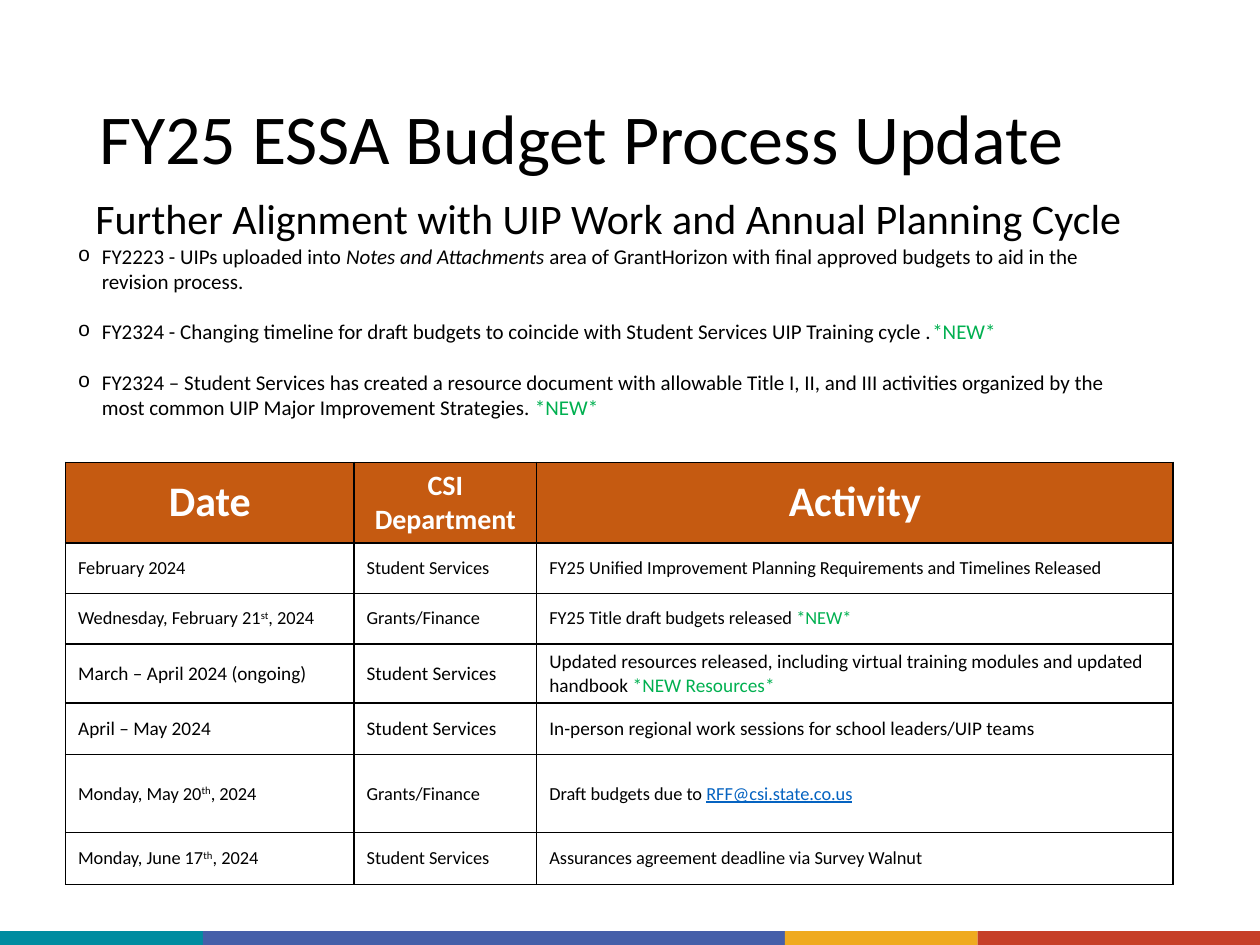
from lxml.etree import SubElement
from pptx import Presentation
from pptx.dml.color import RGBColor
from pptx.enum.shapes import MSO_SHAPE
from pptx.enum.text import MSO_ANCHOR, PP_ALIGN
from pptx.oxml.ns import qn
from pptx.util import Inches, Pt

BLACK = RGBColor(0x00, 0x00, 0x00)
WHITE = RGBColor(0xFF, 0xFF, 0xFF)
GREEN = RGBColor(0x00, 0xB0, 0x50)
BLUE = RGBColor(0x05, 0x63, 0xC1)
RUST = RGBColor(0xC5, 0x5A, 0x11)
TEAL = RGBColor(0x00, 0x8C, 0xA0)
INDIGO = RGBColor(0x45, 0x5F, 0xA9)
GOLD = RGBColor(0xEF, 0xAA, 0x1F)
RED = RGBColor(0xC6, 0x3F, 0x28)

NEW = ("*NEW*", "new")

GOALS = [
    ["FY2223 - UIPs uploaded into ", ("Notes and Attachments ", "italic"),
     "area of GrantHorizon with final approved budgets to aid in the revision process."],
    ["FY2324 - Changing timeline for draft budgets to coincide with Student Services "
     "UIP Training cycle .", NEW],
    ["FY2324 – Student Services has created a resource document with allowable Title I, II, "
     "and III activities organized by the most common UIP Major Improvement Strategies. ", NEW],
]

HEADINGS = [("Date", 24), ("CSI Department", 16), ("Activity", 24)]
COLUMN_WIDTHS = [2.29, 1.45, 5.05]
HEADING_HEIGHT = 0.64
TIMELINE = [
    (0.4, 10.5, ["February 2024"], ["Student Services"],
     ["FY25 Unified Improvement Planning Requirements and Timelines Released"]),
    (0.4, 10.5, ["Wednesday, February 21", ("st", "super"), ", 2024"], ["Grants/Finance"],
     ["FY25 Title draft budgets released ", NEW]),
    (0.47, 11, ["March – April 2024 (ongoing)"], ["Student Services"],
     ["Updated resources released, including virtual training modules and updated handbook ",
      ("*NEW Resources*", "new")]),
    (0.41, 11, ["April – May 2024"], ["Student Services"],
     ["In-person regional work sessions for school leaders/UIP teams"]),
    (0.62, 10.5, ["Monday, May 20", ("th", "super"), ", 2024"], ["Grants/Finance"],
     ["Draft budgets due to ", ("RFF@csi.state.co.us", "address")]),
    (0.41, 10.5, ["Monday, June 17", ("th", "super"), ", 2024"], ["Student Services"],
     ["Assurances agreement deadline via Survey Walnut"]),
]

FOOTER_BANDS = [(1.61, TEAL), (4.62, INDIGO), (1.53, GOLD), (2.24, RED)]


class SlideBuilder:
    """Holds the text style and the slide that is being filled."""

    def __init__(self, slide, font_name="Calibri"):
        self.slide = slide
        self.font_name = font_name

    def band(self, left, top, width, height, color):
        band = self.slide.shapes.add_shape(
            MSO_SHAPE.RECTANGLE, Inches(left), Inches(top), Inches(width), Inches(height))
        band.shadow.inherit = False
        band.fill.solid()
        band.fill.fore_color.rgb = color
        band.line.fill.background()

    def text_frame(self, left, top, width, height, anchor=MSO_ANCHOR.TOP):
        frame = self.slide.shapes.add_textbox(
            Inches(left), Inches(top), Inches(width), Inches(height)).text_frame
        frame.word_wrap = True
        frame.vertical_anchor = anchor
        return frame

    def wording(self, paragraph, parts, size, color=BLACK, bold=False, align=PP_ALIGN.LEFT):
        paragraph.alignment = align
        paragraph.font.name = self.font_name
        paragraph.font.size = Pt(size)
        paragraph.font.bold = bold
        uniform = all(isinstance(part, str) for part in parts)
        if uniform:
            paragraph.font.color.rgb = color
        for part in parts:
            words, role = (part, None) if isinstance(part, str) else part
            run = paragraph.add_run()
            run.text = words
            if not uniform:
                run.font.color.rgb = {"new": GREEN, "address": BLUE}.get(role, color)
            if role == "italic":
                run.font.italic = True
            elif role == "address":
                run.font.underline = True
            elif role == "super":
                run._r.get_or_add_rPr().set("baseline", "30000")

    def bullet(self, frame, parts, size, space_before):
        paragraph = frame.add_paragraph()
        paragraph.space_before = Pt(space_before)
        properties = paragraph._p.get_or_add_pPr()
        properties.set("marL", str(Inches(0.19)))
        properties.set("indent", str(-Inches(0.19)))
        SubElement(properties, qn("a:buFont"), typeface="Courier New")
        SubElement(properties, qn("a:buChar"), char="o")
        self.wording(paragraph, parts, size)

    def table(self, left, top, widths, heights):
        table = self.slide.shapes.add_table(
            len(heights), len(widths), Inches(left), Inches(top),
            Inches(sum(widths)), Inches(sum(heights))).table
        table.horz_banding = False
        for column, width in zip(table.columns, widths):
            column.width = Inches(width)
        for row, height in zip(table.rows, heights):
            row.height = Inches(height)
        return table

    def cell(self, cell, parts, size, fill=None, **style):
        cell.vertical_anchor = MSO_ANCHOR.MIDDLE
        properties = cell._tc.get_or_add_tcPr()
        for side in ("a:lnL", "a:lnR", "a:lnT", "a:lnB"):
            border = SubElement(properties, qn(side), w=str(Pt(1)))
            paint = SubElement(border, qn("a:solidFill"))
            SubElement(paint, qn("a:srgbClr"), val=str(BLACK))
        if fill is None:
            cell.fill.background()
        else:
            cell.fill.solid()
            cell.fill.fore_color.rgb = fill
        self.wording(cell.text_frame.paragraphs[0], parts, size, **style)


def main():
    presentation = Presentation()
    presentation.slide_width = Inches(10)
    presentation.slide_height = Inches(7.5)
    builder = SlideBuilder(presentation.slides.add_slide(presentation.slide_layouts[6]))

    band_left = 0
    for width, color in FOOTER_BANDS:
        builder.band(band_left, 7.39, width, 0.11, color)
        band_left += width

    title = builder.text_frame(0.69, 0.4, 8.62, 1.45, MSO_ANCHOR.MIDDLE).paragraphs[0]
    title.line_spacing = 0.9
    builder.wording(title, ["FY25 ESSA Budget Process Update"], 40)

    overview = builder.text_frame(0.52, 1.48, 8.62, 2.39)
    builder.wording(overview.paragraphs[0],
                    ["Further Alignment with UIP Work and Annual Planning Cycle"], 24,
                    align=PP_ALIGN.CENTER)
    for index, goal in enumerate(GOALS):
        builder.bullet(overview, goal, 12, space_before=14.5 if index else 0)

    heights = [HEADING_HEIGHT] + [height for height, *_ in TIMELINE]
    timeline = builder.table(0.52, 3.67, COLUMN_WIDTHS, heights)
    for column, (heading, size) in enumerate(HEADINGS):
        builder.cell(timeline.cell(0, column), [heading], size, fill=RUST,
                     color=WHITE, bold=True, align=PP_ALIGN.CENTER)
    for row, (_, size, *entries) in enumerate(TIMELINE, start=1):
        for column, entry in enumerate(entries):
            builder.cell(timeline.cell(row, column), entry, size)

    presentation.save("out.pptx")


if __name__ == "__main__":
    main()
